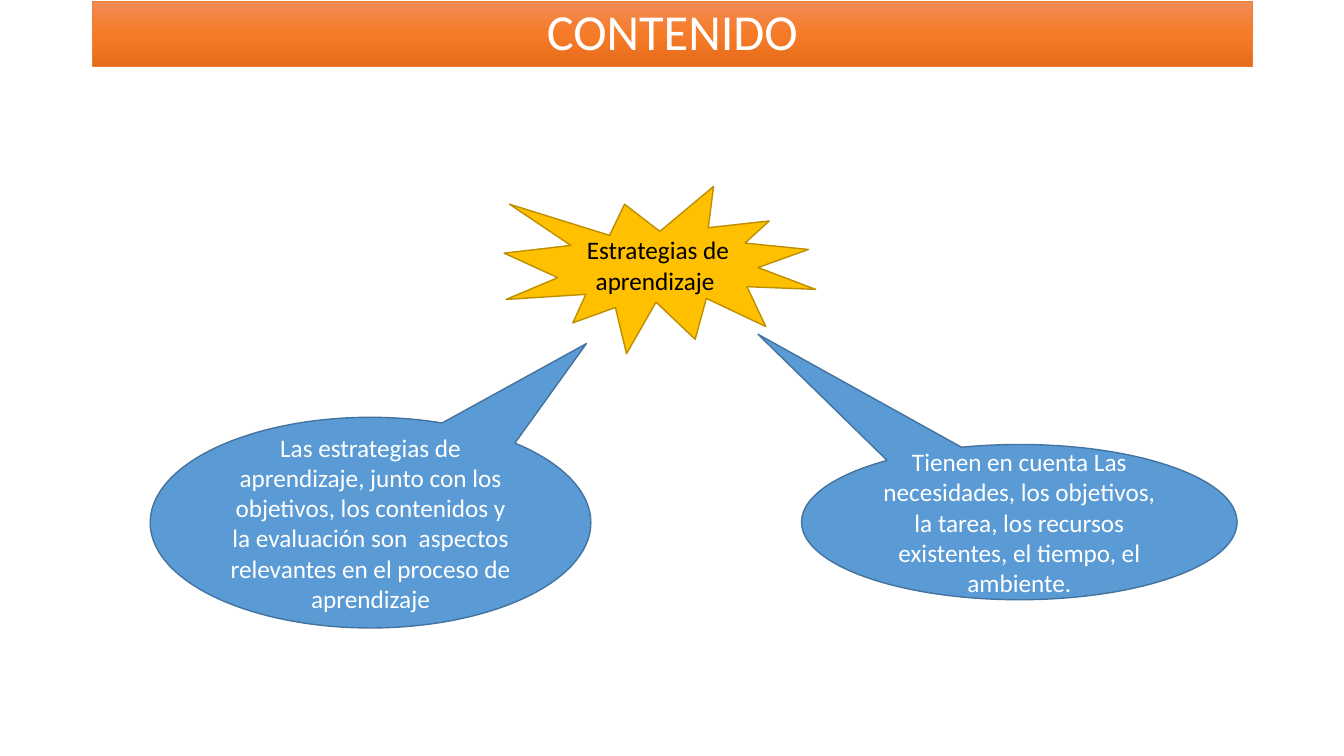
from copy import deepcopy
from dataclasses import dataclass

from pptx import Presentation
from pptx.dml.color import RGBColor
from pptx.enum.shapes import MSO_SHAPE
from pptx.enum.text import MSO_ANCHOR, PP_ALIGN
from pptx.oxml.ns import qn
from pptx.util import Inches, Pt

RECT = MSO_SHAPE.RECTANGLE
BURST = MSO_SHAPE.EXPLOSION1
CALLOUT = MSO_SHAPE.OVAL_CALLOUT
MIDDLE = MSO_ANCHOR.MIDDLE
CENTER = PP_ALIGN.CENTER


@dataclass(frozen=True)
class Theme:
    font: str = "Calibri"
    title_size: int = 36
    body_size: int = 18
    white: str = "FFFFFF"
    black: str = "000000"
    gold: str = "FFC000"
    gold_line: str = "BD8E00"
    blue: str = "5B9BD5"
    blue_line: str = "43739E"
    orange_line: str = "ED7D31"
    orange_blend: tuple[str, ...] = ("F18C57", "F67B28", "E56C19")


THEME = Theme()


@dataclass(frozen=True)
class Figure:
    kind: int
    box: tuple[float, float, float, float]
    text: str
    fills: tuple[str, ...]  # one colour, or three for a vertical blend
    line: str
    line_width: float = 1
    color: str = THEME.white
    size: int = THEME.body_size
    spacing: float = 1.0
    pointer: tuple[float, ...] = ()  # callout tip, relative to the centre


FIGURES = [
    # Central idea
    Figure(BURST, (5, 1.85, 3.09, 1.66), "Estrategias de aprendizaje ",
           (THEME.gold,), THEME.gold_line, color=THEME.black),
    # Callouts pointing at the central idea
    Figure(CALLOUT, (7.95, 4.41, 4.32, 1.54),
           "Tienen en cuenta Las necesidades, los objetivos, la tarea, "
           "los recursos existentes, el tiempo, el ambiente.",
           (THEME.blue,), THEME.blue_line, pointer=(-0.6, -1.21)),
    Figure(CALLOUT, (1.49, 4.14, 4.37, 2.09),
           "Las estrategias de aprendizaje, junto con los objetivos, los contenidos "
           "y la evaluación son  aspectos relevantes en el proceso de aprendizaje",
           (THEME.blue,), THEME.blue_line, pointer=(0.49, -0.85)),
    # Title bar
    Figure(RECT, (0.92, 0.01, 11.5, 0.65), "CONTENIDO",
           THEME.orange_blend, THEME.orange_line, line_width=0.5,
           size=THEME.title_size, spacing=0.9),
]


def rgb(value: str) -> RGBColor:
    return RGBColor.from_string(value)


def fill_shape(s, colors: tuple[str, ...]) -> None:
    if len(colors) == 1:
        s.fill.solid()
        s.fill.fore_color.rgb = rgb(colors[0])
        return
    s.fill.gradient()
    s.fill.gradient_angle = 270
    # A new gradient has two stops: add the middle one
    first = s._element.spPr.find(qn("a:gradFill")).find(qn("a:gsLst"))[0]
    first.addnext(deepcopy(first))
    for i, (stop, color) in enumerate(zip(s.fill.gradient_stops, colors)):
        stop.position = i / (len(colors) - 1)
        stop.color.rgb = rgb(color)


def write_text(s, fig: Figure) -> None:
    tf = s.text_frame
    tf.word_wrap = True
    tf.vertical_anchor = MIDDLE
    p = tf.paragraphs[0]
    p.alignment = CENTER
    p.line_spacing = fig.spacing
    r = p.add_run()
    r.text = fig.text
    r.font.name = THEME.font
    r.font.size = Pt(fig.size)
    r.font.color.rgb = rgb(fig.color)


def draw(slide, fig: Figure) -> None:
    s = slide.shapes.add_shape(fig.kind, *(Inches(v) for v in fig.box))
    s.shadow.inherit = False
    for i, value in enumerate(fig.pointer):
        s.adjustments[i] = value
    fill_shape(s, fig.fills)
    s.line.color.rgb = rgb(fig.line)
    s.line.width = Pt(fig.line_width)
    write_text(s, fig)


def main() -> None:
    prs = Presentation()
    prs.slide_width, prs.slide_height = Inches(13.33), Inches(7.5)
    slide = prs.slides.add_slide(prs.slide_layouts[6])
    for fig in FIGURES:
        draw(slide, fig)
    prs.save("out.pptx")


if __name__ == "__main__":
    main()
